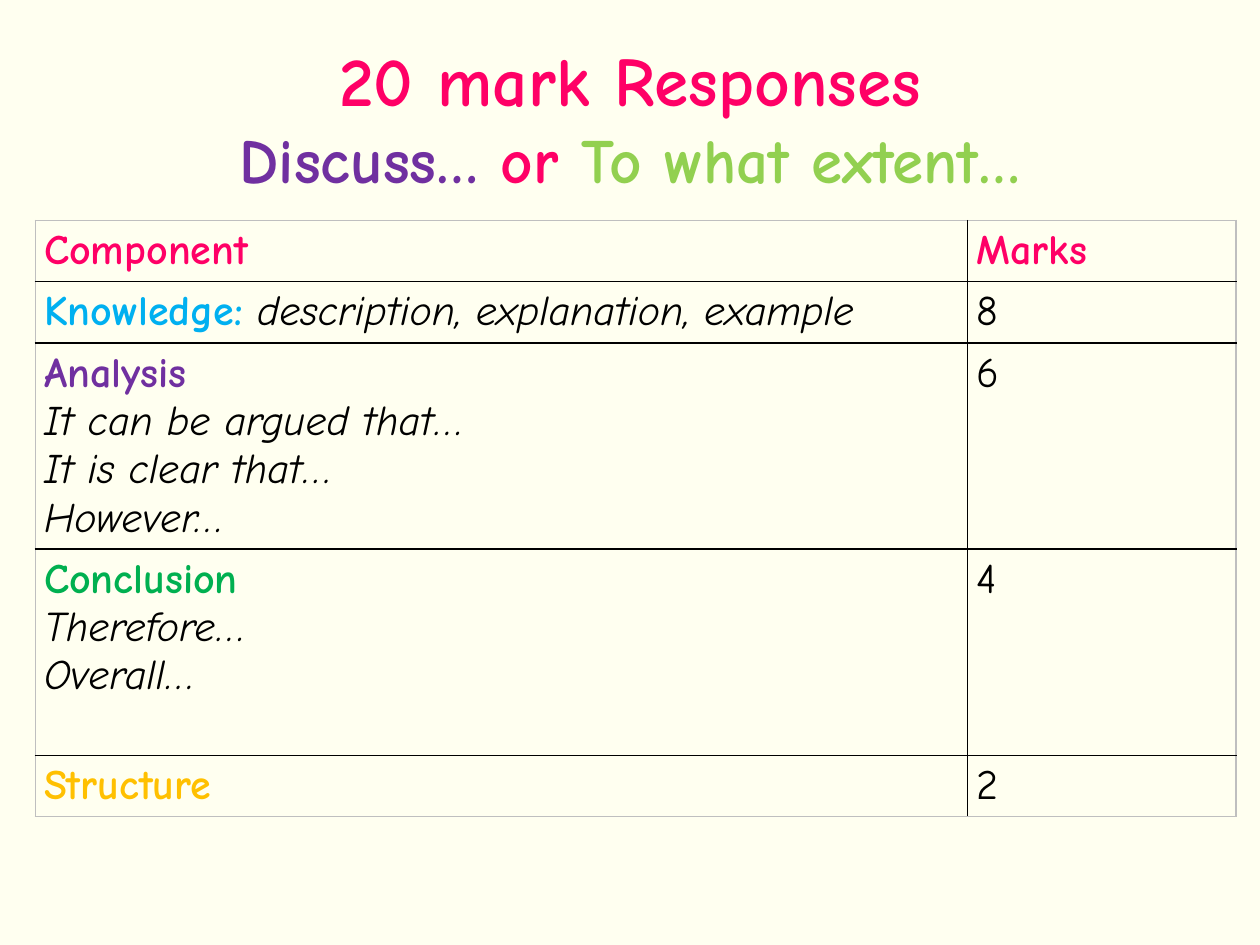
from dataclasses import dataclass

from lxml import etree
from pptx import Presentation
from pptx.dml.color import RGBColor
from pptx.enum.text import MSO_ANCHOR, MSO_AUTO_SIZE, PP_ALIGN
from pptx.oxml.ns import qn
from pptx.util import Inches, Pt

MIDDLE = MSO_ANCHOR.MIDDLE
CENTER = PP_ALIGN.CENTER
NO_AUTOFIT = MSO_AUTO_SIZE.NONE


@dataclass
class Theme:
    font: str = "Comic Neue"
    background: str = "FFFFF0"
    pink: str = "FF0066"
    purple: str = "7030A0"
    lime: str = "92D050"
    blue: str = "00B0F0"
    green: str = "00B050"
    amber: str = "FFC000"
    black: str = "000000"
    frame: str = "BFBFBF"
    title_size: float = 39.6
    subtitle_size: float = 36
    body_size: float = 24


theme = Theme()


def add_run(p, text, color, size=theme.body_size, bold=False, italic=False):
    r = p.add_run()
    r.text = text
    r.font.name = theme.font
    r.font.size = Pt(size)
    r.font.bold = bold
    r.font.italic = italic
    r.font.color.rgb = RGBColor.from_string(color)


def set_border(cell, side, color):
    ln = etree.SubElement(cell._tc.get_or_add_tcPr(), qn(f"a:{side}"), w=str(Pt(1)))
    fill = etree.SubElement(ln, qn("a:solidFill"))
    etree.SubElement(fill, qn("a:srgbClr"), val=color)


prs = Presentation()
prs.slide_width, prs.slide_height = Inches(10), Inches(7.5)
s = prs.slides.add_slide(prs.slide_layouts[5])
s.background.fill.solid()
s.background.fill.fore_color.rgb = RGBColor.from_string(theme.background)

# Title
title = s.shapes.title
title.left, title.top = Inches(0.5), Inches(0.3)
title.width, title.height = Inches(9), Inches(1.25)
tf = title.text_frame
tf.word_wrap = True
tf.auto_size = NO_AUTOFIT
tf.vertical_anchor = MIDDLE
p = tf.paragraphs[0]
p.alignment = CENTER
add_run(p, "20 mark Responses", theme.pink, theme.title_size, bold=True)
p.add_line_break()
for text, color in [
    ("Discuss…", theme.purple),
    (" or ", theme.pink),
    ("To what extent…", theme.lime),
]:
    add_run(p, text, color, theme.subtitle_size, bold=True)

# Mark scheme: heading, its colour, text beside it, lines below it, marks, row height
rows = [
    ("Component", theme.pink, "", [], "Marks", 0.48),
    ("Knowledge:", theme.blue, " description, explanation, example", [], "8", 0.49),
    ("Analysis", theme.purple, "",
     ["It can be argued that…", "It is clear that…", "However…"], "6", 1.63),
    ("Conclusion", theme.green, "", ["Therefore…", "Overall…"], "4", 1.64),
    ("Structure", theme.amber, "", [], "2", 0.48),
]
col_widths = [7.4, 2.13]
table = s.shapes.add_table(
    len(rows), len(col_widths), Inches(0.28), Inches(1.75),
    Inches(sum(col_widths)), Inches(sum(row[-1] for row in rows)),
).table
for col, width in zip(table.columns, col_widths):
    col.width = Inches(width)

for i, (heading, color, beside, below, marks, height) in enumerate(rows):
    table.rows[i].height = Inches(height)
    component, mark = table.cell(i, 0), table.cell(i, 1)

    # Component and marks text
    p = component.text_frame.paragraphs[0]
    add_run(p, heading, color, bold=True)
    if beside:
        add_run(p, beside, theme.black, italic=True)
    for line in below:
        add_run(component.text_frame.add_paragraph(), line, theme.black, italic=True)
    is_header = i == 0
    add_run(mark.text_frame.paragraphs[0], marks,
            theme.pink if is_header else theme.black, bold=is_header)

    # Black lines inside, grey frame outside
    for j, cell in enumerate((component, mark)):
        cell.margin_left = cell.margin_right = Inches(0.07)
        cell.margin_top = cell.margin_bottom = Inches(0.05)
        outer = {
            "lnL": j == 0,
            "lnR": j == len(col_widths) - 1,
            "lnT": i == 0,
            "lnB": i == len(rows) - 1,
        }
        for side, is_outer in outer.items():
            set_border(cell, side, theme.frame if is_outer else theme.black)
        cell.fill.background()

prs.save("out.pptx")
